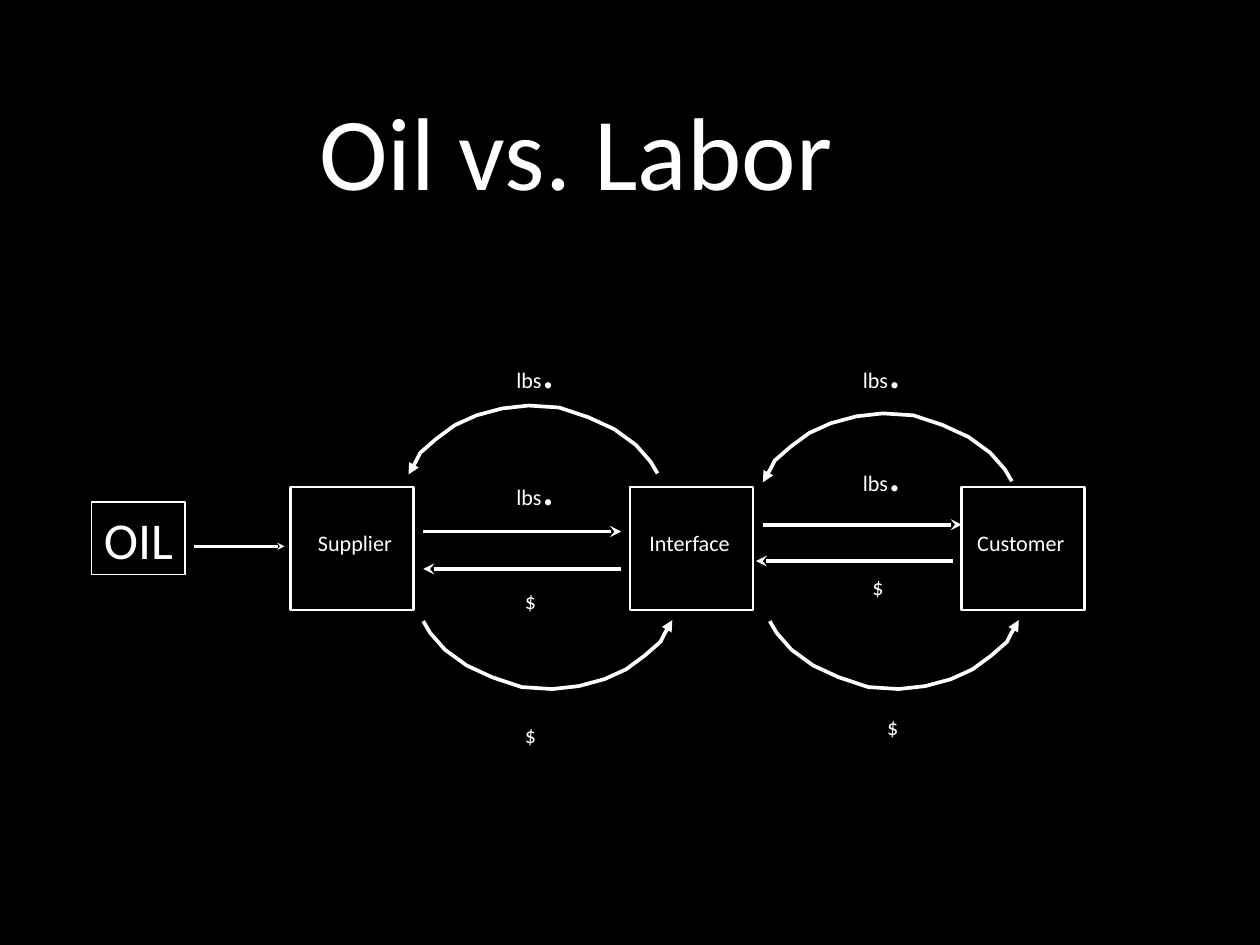
from lxml import etree
from pptx import Presentation
from pptx.dml.color import RGBColor
from pptx.enum.shapes import MSO_CONNECTOR as Connector, MSO_SHAPE as Shape
from pptx.enum.text import MSO_ANCHOR as Anchor, MSO_AUTO_SIZE as AutoSize, PP_ALIGN as Align
from pptx.oxml.ns import qn
from pptx.util import Emu, Pt

PX = 10160
BLACK = RGBColor(0, 0, 0)
WHITE = RGBColor(255, 255, 255)
FONT = "Calibri"

NODES = [("Supplier", 295, 318, 85), ("Interface", 640, 655, 91), ("Customer", 977, 985, 104)]
NODE_TOP, NODE_SIDE = 495, 125
FLOWS = [(775, 977, 533), (968, 768, 570), (430, 631, 540), (631, 430, 578)]
ARC = [(8, -14), (12, -22), (28, -36), (47, -50), (69, -60), (95, -67), (122, -70),
       (153, -68), (183, -58), (209, -46), (231, -30), (246, -13), (253, -1)]
ARC_TIPS = [(415, 482, 1), (1035, 630, -1), (683, 630, -1), (775, 490, 1)]
POUNDS = [(520, 457), (872, 338), (872, 443), (520, 338)]
DOLLARS = [(527, 592), (895, 720), (880, 578), (527, 728)]


def px(*lengths):
    return [Emu(length * PX) for length in lengths]


def style_line(shape, width):
    shape.line.color.rgb = WHITE
    shape.line.width = Pt(width)


def add_arrowhead(shape, end, kind):
    line = shape.element.spPr.find(qn("a:ln"))
    etree.SubElement(line, qn(end), type=kind)


def write_text(box, text, size, inset=0):
    frame = box.text_frame
    frame.text = text
    frame.vertical_anchor = Anchor.MIDDLE
    frame.margin_left = frame.margin_right = Emu(inset * PX)
    frame.margin_top = frame.margin_bottom = Emu(inset * PX)
    para = frame.paragraphs[0]
    para.alignment = Align.CENTER
    for span in para.runs:
        style_span(span, size)
    return frame


def style_span(span, size):
    span.font.name = FONT
    span.font.size = Pt(size)
    span.font.color.rgb = WHITE


def fit_text(box, text, size):
    frame = write_text(box, text, size)
    frame.word_wrap = False
    frame.auto_size = AutoSize.SHAPE_TO_FIT_TEXT
    return frame


def add_title(page, text):
    title = page.shapes.title
    title.left, title.top, title.width, title.height = px(70, 32, 1030, 240)
    title.fill.solid()
    title.fill.fore_color.rgb = BLACK
    frame = write_text(title, text, 84, inset=5)
    frame.auto_size = AutoSize.NONE


def add_frame(page, left, top, width, height, weight):
    box = page.shapes.add_shape(Shape.RECTANGLE, *px(left, top, width, height))
    box.shadow.inherit = False
    box.fill.background()
    style_line(box, weight)
    return box


def add_label(page, text, left, top, width, height):
    box = page.shapes.add_textbox(*px(left, top, width, height))
    return fit_text(box, text, 18)


def add_pounds(page, left, top):
    frame = add_label(page, "lbs", left, top, 48, 71)
    dot = frame.paragraphs[0].add_run()
    dot.text = "."
    style_span(dot, 42)


def add_flow(page, start, end, y, weight):
    flow = page.shapes.add_connector(Connector.STRAIGHT, *px(start, y, end, y))
    style_line(flow, weight)
    add_arrowhead(flow, "a:tailEnd", "stealth")
    etree.SubElement(flow.element.spPr, qn("a:effectLst"))


def add_arc(page, x, y, direction):
    outline = page.shapes.build_freeform(x, y, scale=PX)
    points = [(x + direction * dx, y + direction * dy) for dx, dy in ARC]
    outline.add_line_segments(points, close=False)
    arc = outline.convert_to_shape()
    arc.shadow.inherit = False
    arc.fill.background()
    style_line(arc, 3)
    add_arrowhead(arc, "a:headEnd", "triangle")


def main():
    deck = Presentation()
    deck.slide_width, deck.slide_height = px(1280, 960)
    page = deck.slides.add_slide(deck.slide_layouts[5])
    page.background.fill.solid()
    page.background.fill.fore_color.rgb = BLACK

    add_title(page, "Oil vs. Labor")
    for name, left, text_left, text_width in NODES:
        add_frame(page, left, NODE_TOP, NODE_SIDE, NODE_SIDE, 2)
        add_label(page, name, text_left, 533, text_width, 36)
    for start, end, y in FLOWS:
        add_flow(page, start, end, y, 3)
    for x, y, direction in ARC_TIPS:
        add_arc(page, x, y, direction)
    for left, top in POUNDS:
        add_pounds(page, left, top)
    for left, top in DOLLARS:
        add_label(page, "$", left, top, 24, 36)

    oil = add_frame(page, 93, 510, 95, 74, 1)
    fit_text(oil, "OIL", 42)
    add_flow(page, 197, 289, 555, 2)
    deck.save("out.pptx")


if __name__ == "__main__":
    main()
